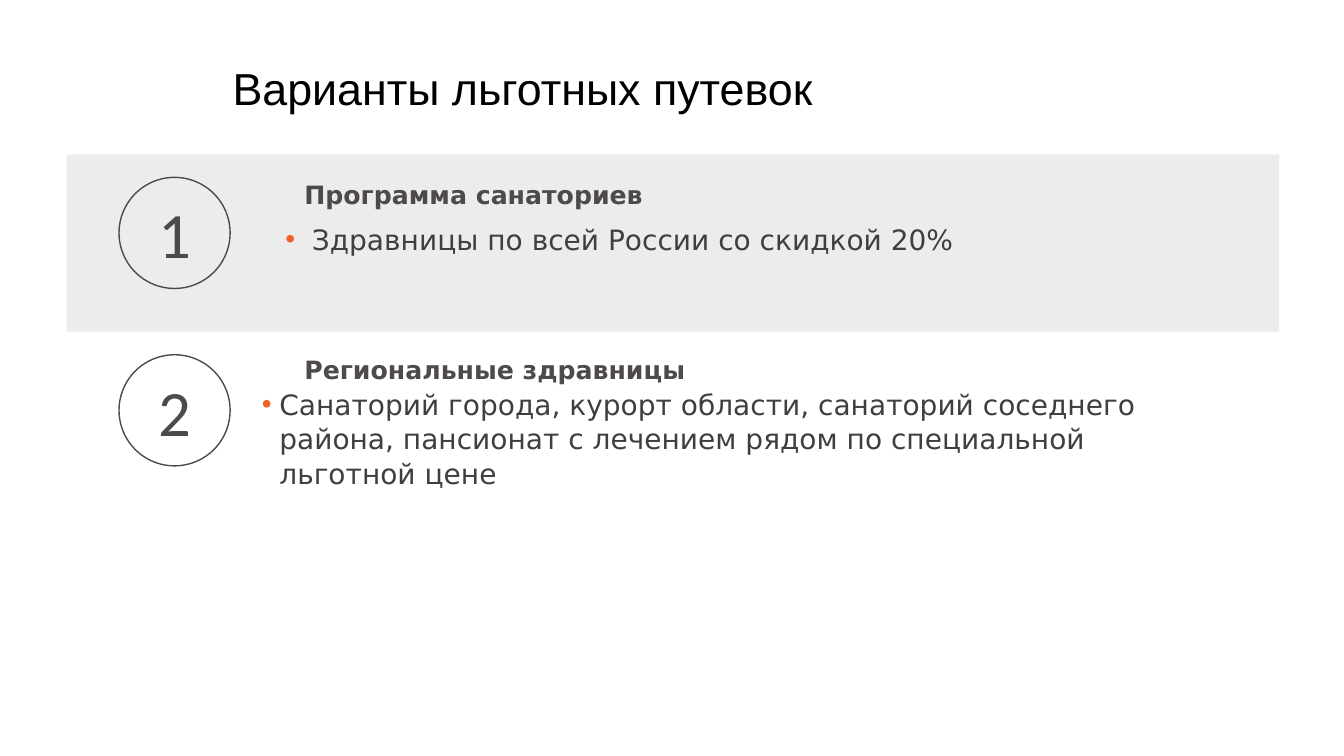
"""Build the slide listing the discounted resort voucher options."""
import dataclasses
import typing

import lxml.etree
import pptx
import pptx.dml.color
import pptx.enum.shapes
import pptx.enum.text
import pptx.oxml.ns
import pptx.util

Cm = pptx.util.Cm
ALIGN = pptx.enum.text.PP_ALIGN
ANCHOR = pptx.enum.text.MSO_ANCHOR
SHAPE = pptx.enum.shapes.MSO_SHAPE


@dataclasses.dataclass(frozen=True)
class TextStyle:
    name: str
    size: float
    color: str
    bold: bool = False


@dataclasses.dataclass(frozen=True)
class Theme:
    band: str = "ECECEC"
    outline: str = "4E4A4B"
    bullet: str = "F26226"
    title: TextStyle = TextStyle("Arial", 32, "000000")
    heading: TextStyle = TextStyle("DejaVu Sans", 18, "4E4A4B", True)
    body: TextStyle = TextStyle("DejaVu Sans", 20, "3F3F3F")
    number: TextStyle = TextStyle("Calibri", 46.2, "4E4A4B")


@dataclasses.dataclass(frozen=True)
class Option:
    heading: str
    heading_top: float
    text: str
    text_left: float
    text_top: float
    indent: float


THEME = Theme()
BAND_LEFT, BAND_TOP, BAND_WIDTH, ROW_HEIGHT = 1.68, 3.89, 30.56, 4.47
CIRCLE_LEFT, CIRCLE_TOP, CIRCLE_SIZE = 3.0, 4.47, 2.8
OPTIONS = (
    Option("Программа санаториев", 4.29,
           "Здравницы по всей России со скидкой 20%", 7.19, 5.59, 0.67),
    Option("Региональные здравницы", 8.69,
           "Санаторий города, курорт области, санаторий соседнего района, "
           "пансионат с лечением рядом по специальной льготной цене",
           6.6, 9.75, 0.44),
)


def rgb(color: str) -> pptx.dml.color.RGBColor:
    """Turn a hex string into a colour."""
    return pptx.dml.color.RGBColor.from_string(color)


def place(sp: typing.Any, left: float, top: float, width: float, height: float) -> None:
    """Move and size a shape, in centimetres."""
    box = {"left": left, "top": top, "width": width, "height": height}
    for key, value in box.items():
        setattr(sp, key, Cm(value))


def write(sp: typing.Any, text: str, style: TextStyle, inset: float = 0,
          align: ALIGN = ALIGN.LEFT, anchor: ANCHOR = ANCHOR.TOP,
          wrap: bool = True) -> typing.Any:
    """Fill a shape with one styled paragraph and return it."""
    tf = sp.text_frame
    frame = {"auto_size": pptx.enum.text.MSO_AUTO_SIZE.NONE, "word_wrap": wrap,
             "vertical_anchor": anchor}
    frame |= {f"margin_{side}": Cm(inset) for side in ("left", "right", "top", "bottom")}
    for key, value in frame.items():
        setattr(tf, key, value)
    p = tf.paragraphs[0]
    p.alignment = align
    r = p.add_run()
    r.text = text
    font = {"name": style.name, "size": pptx.util.Pt(style.size), "bold": style.bold}
    for key, value in font.items():
        setattr(r.font, key, value)
    r.font.color.rgb = rgb(style.color)
    return p


def add_bullet(p: typing.Any, indent: float) -> None:
    """Give a paragraph a coloured bullet and a hanging indent."""
    qn = pptx.oxml.ns.qn
    pPr = p._p.get_or_add_pPr()
    pPr.set("marL", str(Cm(indent)))
    pPr.set("indent", str(-Cm(indent)))
    color = lxml.etree.SubElement(pPr, qn("a:buClr"))
    lxml.etree.SubElement(color, qn("a:srgbClr"), val=THEME.bullet)
    lxml.etree.SubElement(pPr, qn("a:buChar"), char="•")
    p.line_spacing = 1.02
    p.space_before = pptx.util.Pt(0)


def add_band(shapes: typing.Any) -> None:
    """Draw the grey band behind the first option."""
    sp = shapes.add_shape(SHAPE.RECTANGLE, 0, 0, 0, 0)
    place(sp, BAND_LEFT, BAND_TOP, BAND_WIDTH, ROW_HEIGHT)
    sp.shadow.inherit = False
    sp.fill.solid()
    sp.fill.fore_color.rgb = rgb(THEME.band)
    sp.line.fill.background()
    shapes.element.insert(2, sp.element)


def add_number(shapes: typing.Any, index: int) -> None:
    """Draw the numbered circle of an option."""
    sp = shapes.add_shape(SHAPE.OVAL, 0, 0, 0, 0)
    place(sp, CIRCLE_LEFT, CIRCLE_TOP + index * ROW_HEIGHT, CIRCLE_SIZE, CIRCLE_SIZE)
    sp.shadow.inherit = False
    sp.fill.background()
    sp.line.color.rgb = rgb(THEME.outline)
    sp.line.width = pptx.util.Pt(1)
    write(sp, str(index + 1), THEME.number, align=ALIGN.CENTER, anchor=ANCHOR.MIDDLE)


def add_option(shapes: typing.Any, body: typing.Any, index: int, option: Option) -> None:
    """Draw one option: bulleted text, heading and number."""
    place(body, option.text_left, option.text_top, 23.75, 2.4)
    add_bullet(write(body, option.text, THEME.body), option.indent)
    sp = shapes.add_textbox(0, 0, 0, 0)
    place(sp, 7.44, option.heading_top, 10.85, 0.66)
    write(sp, option.heading, THEME.heading, inset=0.23)
    add_number(shapes, index)


def main() -> None:
    """Build and save the presentation."""
    prs = pptx.Presentation()
    prs.slide_width, prs.slide_height = Cm(33.87), Cm(19.05)
    s = prs.slides.add_slide(prs.slide_layouts[3])
    title, *bodies = s.placeholders
    place(title, 5.61, 1.4, 15.24, 1.63)
    write(title, "Варианты льготных путевок", THEME.title, inset=0.25,
          anchor=ANCHOR.MIDDLE, wrap=False)
    add_band(s.shapes)
    for index, (body, option) in enumerate(zip(bodies, OPTIONS)):
        add_option(s.shapes, body, index, option)
    prs.save("out.pptx")


if __name__ == "__main__":
    main()
